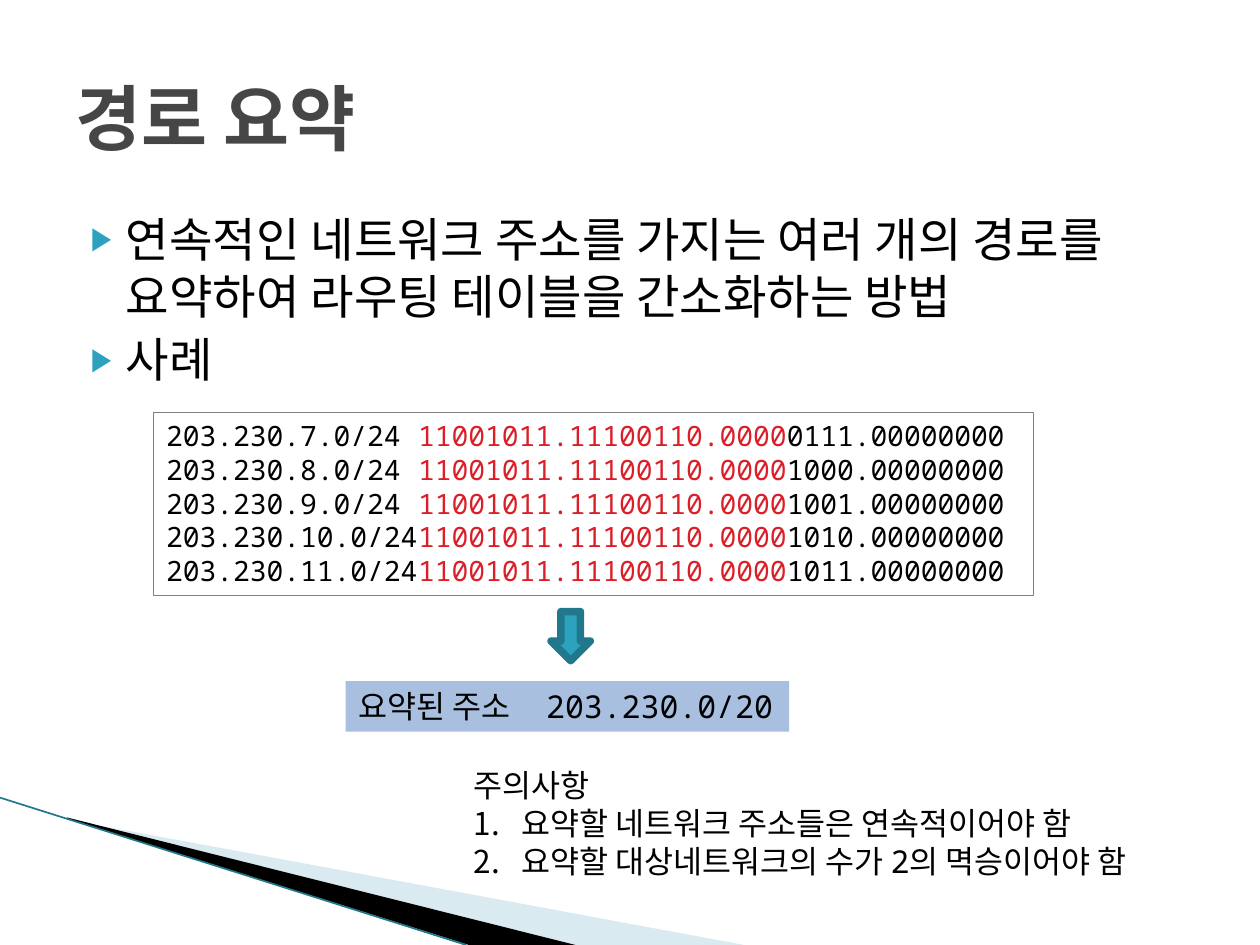
"""Builds the route summarization slide and saves it as out.pptx."""
from lxml import etree
from pptx import Presentation
from pptx.dml.color import RGBColor
from pptx.enum.shapes import MSO_CONNECTOR, MSO_SHAPE
from pptx.enum.text import MSO_ANCHOR, MSO_AUTO_SIZE, PP_ALIGN
from pptx.oxml.ns import qn
from pptx.util import Cm, Pt

RECTANGLE, DOWN_ARROW = MSO_SHAPE.RECTANGLE, MSO_SHAPE.DOWN_ARROW
STRAIGHT = MSO_CONNECTOR.STRAIGHT
LEFT, TOP, MIDDLE = PP_ALIGN.LEFT, MSO_ANCHOR.TOP, MSO_ANCHOR.MIDDLE
NO_FIT = MSO_AUTO_SIZE.NONE
FONT = "Noto Sans Mono"
BLACK, TEAL, DARK_TEAL = "000000", "2DA2BF", "21788D"


def color(hex_value):
    return RGBColor.from_string(hex_value)


def add_run(paragraph, text, size, hex_value=BLACK, bold=False):
    run = paragraph.add_run()
    run.text = text
    for key, value in {"name": FONT, "size": Pt(size), "bold": bold}.items():
        setattr(run.font, key, value)
    run.font.color.rgb = color(hex_value)


prs = Presentation()
prs.slide_width, prs.slide_height = Cm(25.4), Cm(19.05)
slide = prs.slides.add_slide(prs.slide_layouts[5])
shapes = slide.shapes

wedges = [
    ("A0CBDC", 40, [(140, 1653), (1500, 1905), (1158, 1905), (140, 1651)]),
    (BLACK, 100, [(135, 1648), (1160, 1905), (945, 1905), (137, 1651)]),
]
for fill, opacity, points in wedges:
    builder = shapes.build_freeform(*points[0], scale=Cm(0.01))
    builder.add_line_segments(points[1:], close=True)
    wedge = builder.convert_to_shape()
    wedge.shadow.inherit = False
    wedge.fill.solid()
    wedge.fill.fore_color.rgb = color(fill)
    wedge.line.fill.background()
    tint = wedge._element.spPr.find(".//" + qn("a:srgbClr"))
    etree.SubElement(tint, qn("a:alpha"), val=str(opacity * 1000))

edge = shapes.add_connector(STRAIGHT, Cm(0), Cm(16.08), Cm(9.4), Cm(19.05))
edge.line.color.rgb = color(DARK_TEAL)
edge.line.width = Pt(0.95)
etree.SubElement(edge._element.spPr, qn("a:effectLst"))

title = shapes.title
title_place = {"left": Cm(1.27), "top": Cm(0.76), "width": Cm(22.86), "height": Cm(3.18)}
for key, value in title_place.items():
    setattr(title, key, value)
title_format = {"vertical_anchor": MIDDLE, "auto_size": NO_FIT, "word_wrap": True}
for key, value in title_format.items():
    setattr(title.text_frame, key, value)
heading = title.text_frame.paragraphs[0]
heading.alignment = LEFT
add_run(heading, "경로 요약", 41, "464646", True)

body = shapes.add_textbox(Cm(1.27), Cm(4.11), Cm(22.86), Cm(6))
addresses = shapes.add_shape(RECTANGLE, Cm(3.1), Cm(8.32), Cm(17.73), Cm(3.69))
summary = shapes.add_shape(RECTANGLE, Cm(6.97), Cm(13.73), Cm(8.94), Cm(1.02))
cautions = shapes.add_textbox(Cm(9.3), Cm(15.32), Cm(15.09), Cm(2.57))
arrow = shapes.add_shape(DOWN_ARROW, Cm(11.11), Cm(12.33), Cm(0.79), Cm(0.99))

for box in (addresses, summary, arrow):
    box.shadow.inherit = False
addresses.fill.background()
addresses.line.color.rgb = color("808080")
addresses.line.width = Pt(0.75)
summary.fill.solid()
summary.fill.fore_color.rgb = color("A8BFDF")
summary.line.fill.background()
summary.text_frame.margin_right = 0
arrow.fill.solid()
arrow.fill.fore_color.rgb = color(TEAL)
arrow.line.color.rgb = color(DARK_TEAL)
arrow.line.width = Pt(4.33)
etree.SubElement(arrow.line._ln, qn("a:round"))

bullet = [("buClr", {}), ("buSzPct", {"val": "68000"}), ("buFont", {"typeface": "Arial"}),
          ("buChar", {"char": "▶"})]
number = [("buAutoNum", {"type": "arabicPeriod"})]
prefix = "11001011.11100110.0000"
routes = [(7, "0111"), (8, "1000"), (9, "1001"), (10, "1010"), (11, "1011")]
contents = [
    (body, 27, 1.02, 0.71, 4, None, [
        (bullet, [("연속적인 네트워크 주소를 가지는 여러 개의 경로를 요약하여 라우팅 테이블을 간소화하는 방법", BLACK)]),
        (bullet, [("사례", BLACK)])]),
    (addresses, 16, 0, 0, 0, 5.08, [
        ([], [(f"203.230.{octet}.0/24\t", BLACK), (prefix, "DA1F28"),
              (f"{bits}.00000000", BLACK)]) for octet, bits in routes]),
    (summary, 18, 0, 0, 0, 3.79, [([], [("요약된 주소\t203.230.0/20", BLACK)])]),
    (cautions, 18, 0.97, 0.97, 0, None, [
        ([], [("주의사항", BLACK)]),
        (number, [("요약할 네트워크 주소들은 연속적이어야 함", BLACK)]),
        (number, [("요약할 대상네트워크의 수가 2의 멱승이어야 함", BLACK)])]),
]
for box, size, margin, hanging, gap, tab, lines in contents:
    frame = box.text_frame
    frame.word_wrap = True
    frame.vertical_anchor = TOP
    for index, (marks, runs) in enumerate(lines):
        paragraph = frame.add_paragraph() if index else frame.paragraphs[0]
        paragraph.alignment = LEFT
        if index:
            paragraph.space_before = Pt(gap)
        properties = paragraph._p.get_or_add_pPr()
        if marks:
            properties.set("marL", str(Cm(margin)))
            properties.set("indent", str(-Cm(hanging)))
        for tag, values in marks:
            mark = etree.SubElement(properties, qn("a:" + tag), **values)
            if tag == "buClr":
                etree.SubElement(mark, qn("a:srgbClr"), val=TEAL)
        if tab:
            stops = etree.SubElement(properties, qn("a:tabLst"))
            etree.SubElement(stops, qn("a:tab"), pos=str(Cm(tab)), algn="l")
        for text, hex_value in runs:
            add_run(paragraph, text, size, hex_value)

prs.save("out.pptx")
